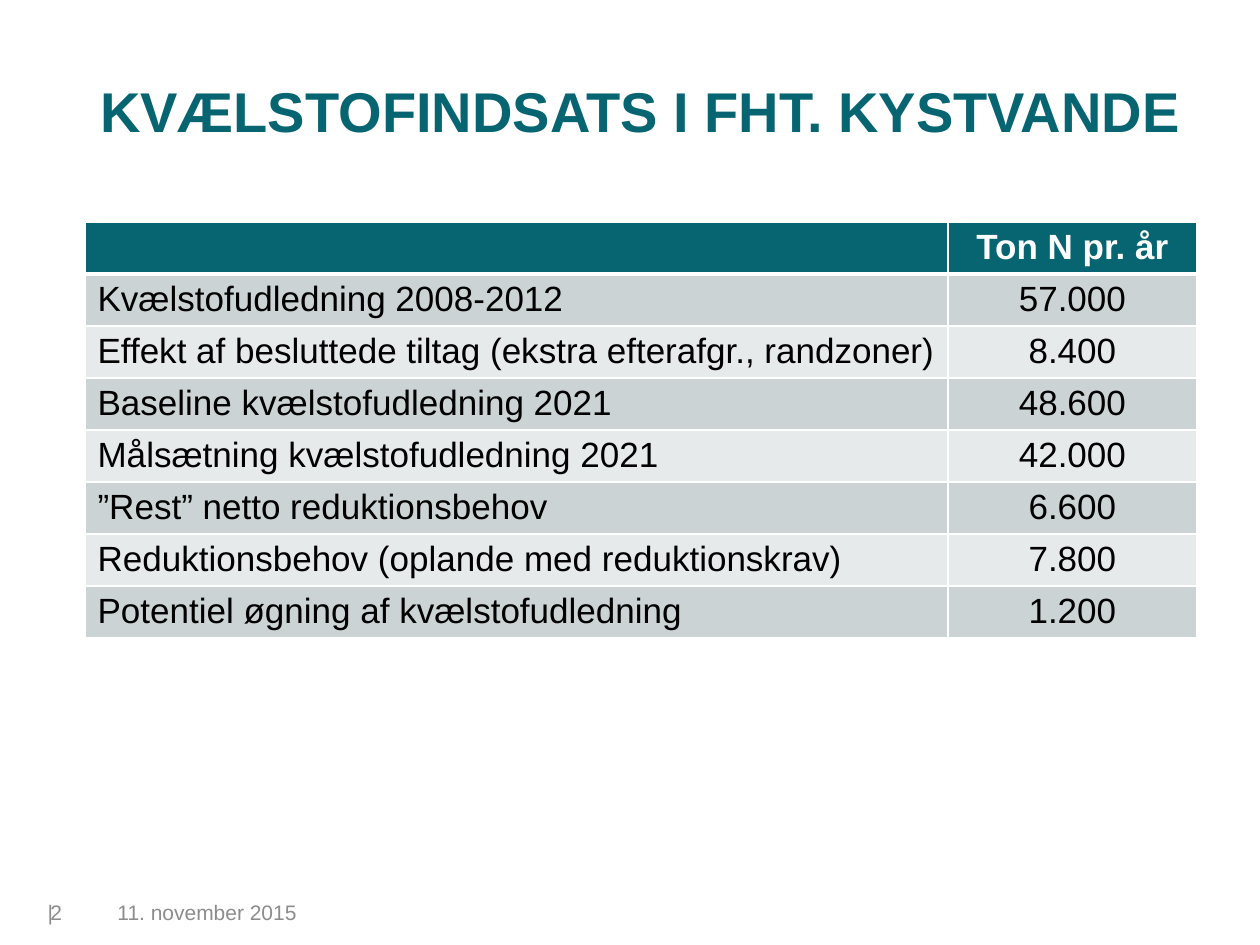
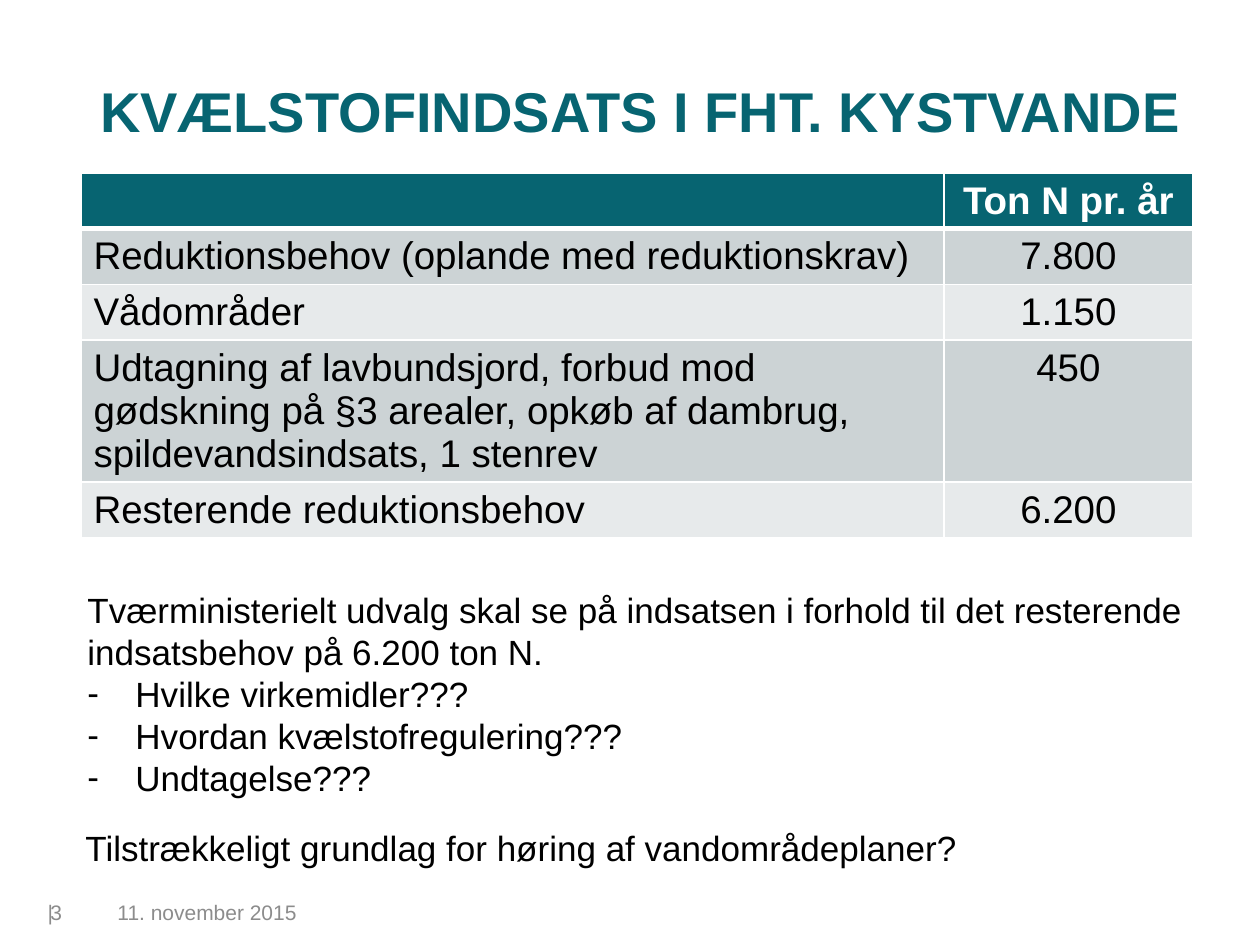
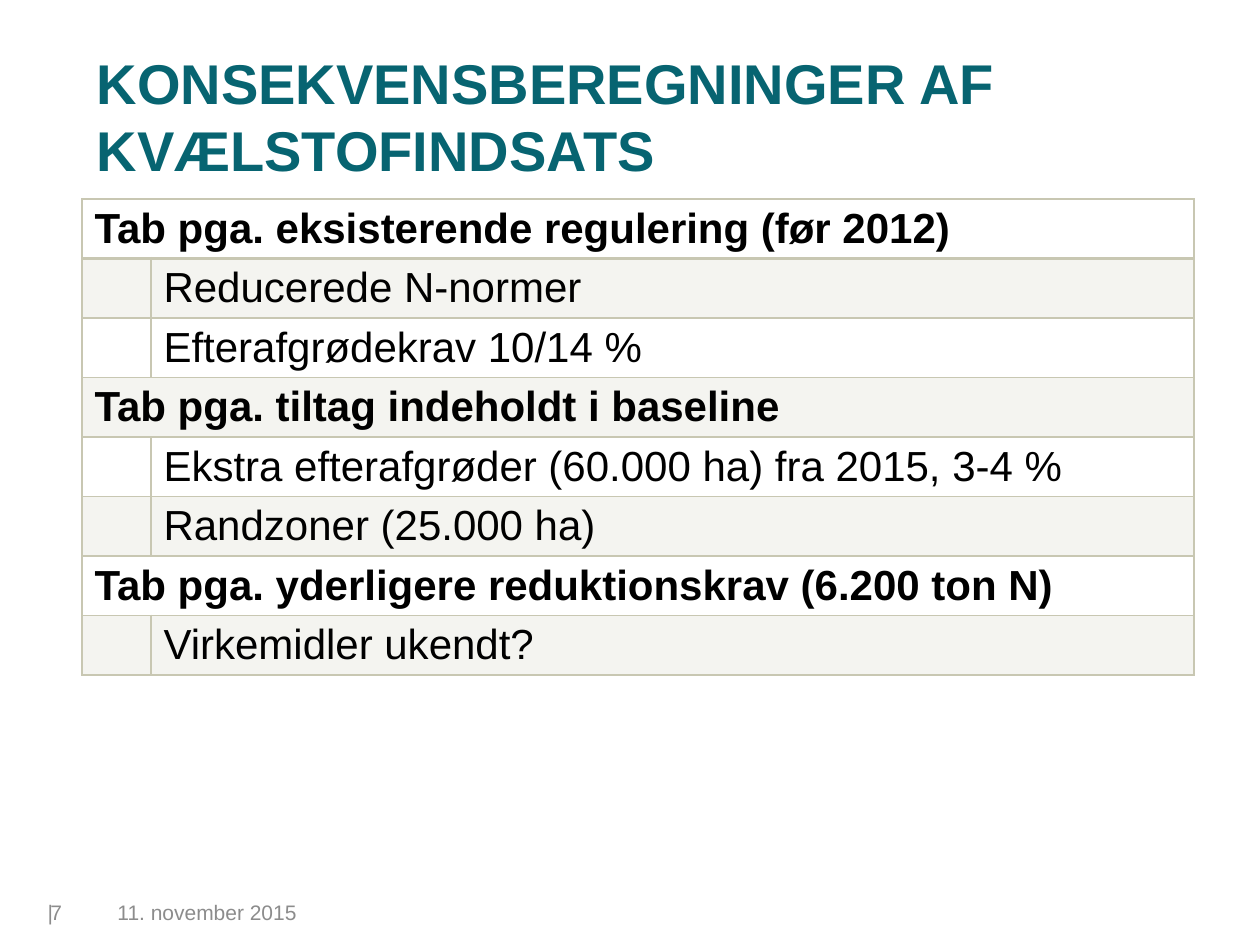
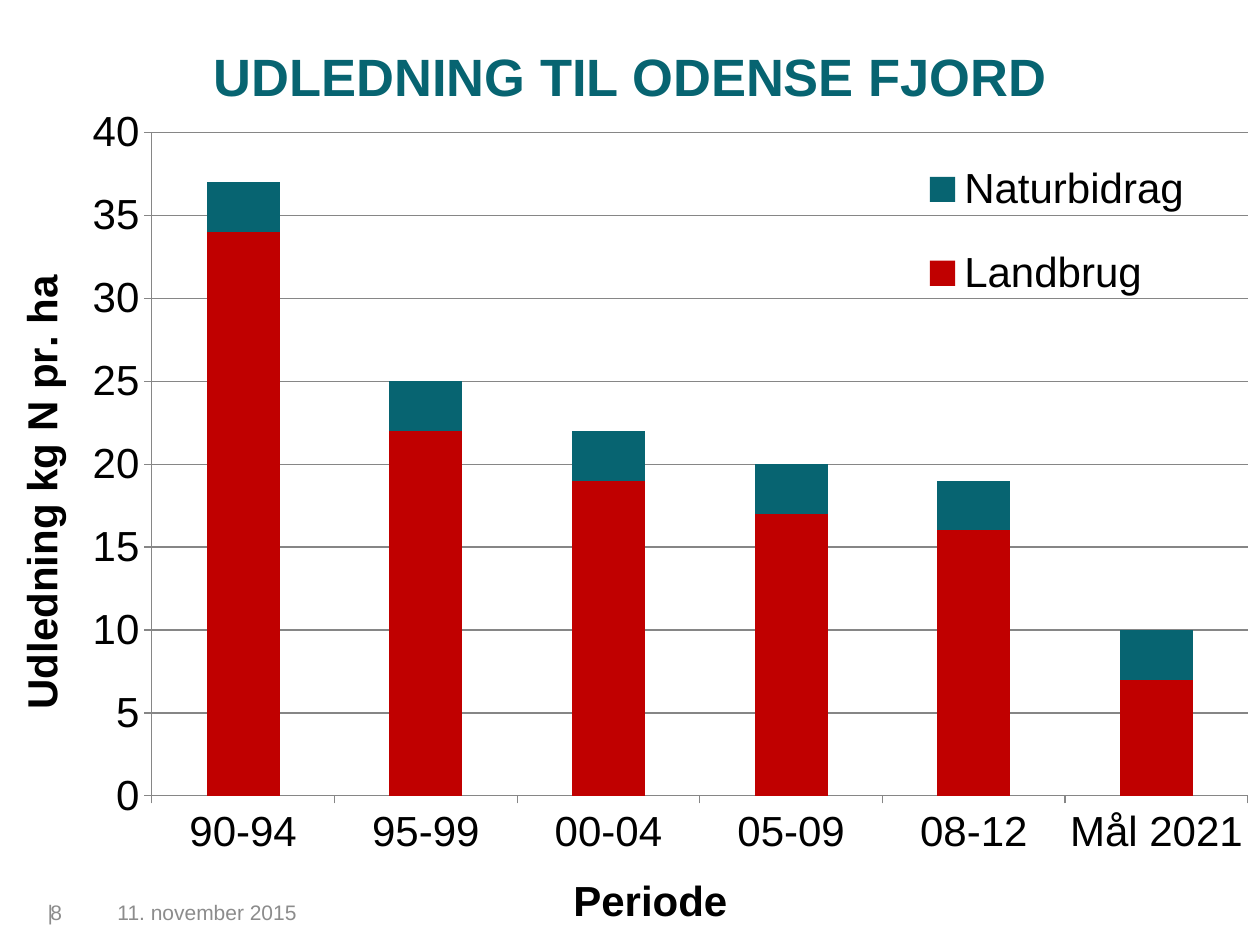
from dataclasses import dataclass
from typing import Any

from lxml.etree import SubElement as Sub
from pptx import Presentation
from pptx.chart.data import CategoryChartData as Data
from pptx.dml.color import RGBColor as Rgb
from pptx.enum.chart import XL_CHART_TYPE as Kind, XL_LEGEND_POSITION as Spot, XL_TICK_MARK as Tick
from pptx.enum.text import MSO_ANCHOR as Anchor, MSO_AUTO_SIZE as Auto, PP_ALIGN as Align
from pptx.oxml import parse_xml
from pptx.oxml.ns import nsdecls, qn
from pptx.util import Emu, Pt

# Shared look
FONT = "Arial"
HUES = {
    "teal": "076471", "red": "C00000", "grey": "8C8C8C", "rule": "868686",
    "dark": "CCD3D5", "light": "E7EAEB", "sand": "C8C7B2", "pale": "F4F4F0",
    "white": "FFFFFF", "black": "000000",
}
DATE = "11. november 2015"
NITRO = "KVÆLSTOFINDSATS I FHT. KYSTVANDE"
ROW = 52


@dataclass
class Box:
    left: int
    top: int
    width: int
    height: int


@dataclass
class Row:
    cells: tuple[str, ...]
    fill: str | None
    ink: str = "black"
    bold: bool = False
    base: int = 1
    merge: bool = False


@dataclass
class Grid:
    left: int
    top: int
    cols: tuple[int, ...]
    size: int
    edge: str
    aligns: tuple[Any, ...]
    rows: list[Row]


TITLE = Box(84, 55, 1113, 110)
TALL = Box(84, 37, 1113, 157)
HIGH = Box(74, -3, 1113, 157)


# Helpers
def px(count: float) -> Emu:
    return Emu(round(count * 914400 / 126))


def hue(name: str) -> Rgb:
    return Rgb.from_string(HUES[name])


def apply(item: Any, values: dict[str, Any]) -> None:
    for key, value in values.items():
        setattr(item, key, value)


def place(box: Box) -> list[Emu]:
    return [px(n) for n in (box.left, box.top, box.width, box.height)]


def ink(font: Any, size: int, color: str = "black", bold: bool = False) -> None:
    apply(font, {"name": FONT, "size": Pt(size), "bold": bold})
    font.color.rgb = hue(color)


def write(para: Any, text: str, size: int, color: str = "black", bold: bool = False) -> None:
    para.text = text
    for run in para.runs:
        ink(run.font, size, color, bold)


def add_text(slide: Any, box: Box, lines: list[str], size: int,
             color: str = "black", bold: bool = False, fit: bool = True) -> Any:
    frame = slide.shapes.add_textbox(*place(box)).text_frame
    apply(frame, {"word_wrap": not fit,
                  "auto_size": Auto.SHAPE_TO_FIT_TEXT if fit else Auto.NONE})
    for i, line in enumerate(lines):
        para = frame.add_paragraph() if i else frame.paragraphs[0]
        write(para, line, size, color, bold)
    return frame


def add_dash(para: Any) -> None:
    props = para._p.get_or_add_pPr()
    props.set("marL", str(px(48)))
    props.set("indent", str(-px(48)))
    Sub(props, qn("a:buFont"), typeface=FONT)
    Sub(props, qn("a:buChar"), char="-")


def add_page(deck: Any, title: str, page: int, box: Box = TITLE,
             size: int = 32, align: Any = Align.CENTER) -> Any:
    slide = deck.slides.add_slide(deck.slide_layouts[5])
    head = slide.shapes.title
    apply(head, dict(zip(("left", "top", "width", "height"), place(box))))
    apply(head.text_frame, {"word_wrap": True, "auto_size": Auto.NONE,
                            "vertical_anchor": Anchor.MIDDLE})
    para = head.text_frame.paragraphs[0]
    write(para, title, size, "teal", True)
    para.alignment = align
    # Footer: date, then page number and bar set by a tab stop
    add_text(slide, Box(105, 893, 294, 50), [DATE], 12, "grey", fit=False)
    foot = add_text(slide, Box(0, 893, 98, 50), [f"{page}\t|"], 12, "grey", fit=False)
    props = foot.paragraphs[0]._p.get_or_add_pPr()
    props.set("marL", str(px(38)))
    props.set("indent", "0")
    Sub(Sub(props, qn("a:tabLst")), qn("a:tab"), pos=str(px(67)), algn="l")
    return slide


# Tables
def add_edge(cell: Any, color: str, top: int, base: int) -> None:
    props = cell._tc.get_or_add_tcPr()
    for i, (side, width) in enumerate({"L": 1, "R": 1, "T": top, "B": base}.items()):
        line = parse_xml(
            f'<a:ln{side} {nsdecls("a")} w="{Pt(width)}"><a:solidFill>'
            f'<a:srgbClr val="{HUES[color]}"/></a:solidFill></a:ln{side}>')
        props.insert(i, line)


def add_grid(slide: Any, grid: Grid) -> None:
    box = Box(grid.left, grid.top, sum(grid.cols), ROW * len(grid.rows))
    table = slide.shapes.add_table(len(grid.rows), len(grid.cols), *place(box)).table
    apply(table, {"first_row": False, "horz_banding": False})
    for col, width in zip(table.columns, grid.cols):
        col.width = px(width)
    top = 1
    for r, row in enumerate(grid.rows):
        for c, text in enumerate(row.cells):
            cell = table.cell(r, c)
            if row.fill:
                cell.fill.solid()
                cell.fill.fore_color.rgb = hue(row.fill)
            else:
                cell.fill.background()
            add_edge(cell, grid.edge, top, row.base)
            if text:
                para = cell.text_frame.paragraphs[0]
                write(para, text, grid.size, row.ink, row.bold)
                para.alignment = grid.aligns[c]
        if row.merge:
            table.cell(r, 0).merge(table.cell(r, len(grid.cols) - 1))
        top = row.base


def ton_grid(left: int, top: int, size: int, pairs: list[tuple[str, str]]) -> Grid:
    rows = [Row(("", "Ton N pr. år"), "teal", "white", True, 3)]
    rows += [Row(pair, ("dark", "light")[i % 2]) for i, pair in enumerate(pairs)]
    return Grid(left, top, (863, 249), size, "white", (Align.LEFT, Align.CENTER), rows)


def loss_grid(groups: dict[str, list[str]]) -> Grid:
    lines = []
    for head, items in groups.items():
        lines += [(head, "")] + [("", item) for item in items]
    rows = [Row(line, "pale" if i % 2 else None, bold=bool(line[0]),
                base=1 if i else 2, merge=bool(line[0]))
            for i, line in enumerate(lines)]
    return Grid(82, 199, (69, 1043), 24, "sand", (Align.LEFT, Align.LEFT), rows)


# Chart
def set_layout(item: Any, index: int, inner: bool = False, **parts: float) -> None:
    for old in item.findall(qn("c:layout")):
        item.remove(old)
    layout = parse_xml(f'<c:layout {nsdecls("c")}/>')
    item.insert(index, layout)
    manual = Sub(layout, qn("c:manualLayout"))
    if inner:
        Sub(manual, qn("c:layoutTarget"), val="inner")
    for key in ("xMode", "yMode"):
        Sub(manual, qn(f"c:{key}"), val="edge")
    for key, value in parts.items():
        Sub(manual, qn(f"c:{key}"), val=str(value))


def add_bars(slide: Any, box: Box, cats: list[str],
             series: dict[str, tuple[str, list[int]]]) -> None:
    data = Data(number_format="0")
    data.categories = cats
    for name, (_, values) in series.items():
        data.add_series(name, values)
    chart = slide.shapes.add_chart(Kind.COLUMN_CLUSTERED, *place(box), data).chart
    apply(chart, {"has_title": False, "has_legend": True})
    ink(chart.font, 24)
    clear = parse_xml(f'<c:spPr {nsdecls("c", "a")}><a:noFill/><a:ln><a:noFill/></a:ln></c:spPr>')
    chart._chartSpace.find(qn("c:txPr")).addprevious(clear)
    # Bars share one slot, so the lower value stands in front
    plot = chart.plots[0]
    apply(plot, {"gap_width": 150, "overlap": 100, "vary_by_categories": False})
    for bar, (color, _) in zip(plot.series, series.values()):
        bar.format.fill.solid()
        bar.format.fill.fore_color.rgb = hue(color)
    set_layout(plot._element.getparent(), 0, True, x=0.124, y=0.084, w=0.861, h=0.813)
    # Axes
    axis = chart.value_axis
    apply(axis, {"minimum_scale": 0, "maximum_scale": 40, "major_unit": 5,
                 "has_major_gridlines": True, "has_title": True})
    apply(axis.tick_labels, {"number_format": "0", "number_format_is_linked": False})
    for side in (axis, chart.category_axis):
        apply(side, {"major_tick_mark": Tick.OUTSIDE, "minor_tick_mark": Tick.NONE})
    for part in (axis, chart.category_axis, axis.major_gridlines):
        part.format.line.color.rgb = hue("rule")
        part.format.line.width = Pt(0.75)
    label = axis.axis_title
    write(label.text_frame.paragraphs[0], "Udledning kg N pr. ha", 24, bold=True)
    set_layout(label._element, 1, x=0.01, y=0.25)
    # Legend
    apply(chart.legend, {"position": Spot.RIGHT, "include_in_layout": True})
    ink(chart.legend.font, 24)
    set_layout(chart.legend._element, 1, x=0.72, y=0.08, w=0.23, h=0.25)


def main() -> None:
    deck = Presentation()
    apply(deck, {"slide_width": px(1260), "slide_height": px(945)})

    # Nitrogen load and target
    slide = add_page(deck, NITRO, 2)
    add_grid(slide, ton_grid(85, 222, 20, [
        ("Kvælstofudledning 2008-2012", "57.000"),
        ("Effekt af besluttede tiltag (ekstra efterafgr., randzoner)", "8.400"),
        ("Baseline kvælstofudledning 2021", "48.600"),
        ("Målsætning kvælstofudledning 2021", "42.000"),
        ("”Rest” netto reduktionsbehov", "6.600"),
        ("Reduktionsbehov (oplande med reduktionskrav)", "7.800"),
        ("Potentiel øgning af kvælstofudledning", "1.200"),
    ]))

    # Remaining need
    slide = add_page(deck, NITRO, 3)
    add_grid(slide, ton_grid(81, 173, 22, [
        ("Reduktionsbehov (oplande med reduktionskrav)", "7.800"),
        ("Vådområder", "1.150"),
        ("Udtagning af lavbundsjord, forbud mod gødskning på §3 arealer, "
         "opkøb af dambrug, spildevandsindsats, 1 stenrev", "450"),
        ("Resterende reduktionsbehov", "6.200"),
    ]))
    notes = add_text(slide, Box(75, 582, 1129, 224), [
        "Tværministerielt udvalg skal se på indsatsen i forhold til det resterende\v"
        "indsatsbehov på 6.200 ton N.",
        "Hvilke virkemidler???", "Hvordan kvælstofregulering???", "Undtagelse???",
    ], 20)
    for para in notes.paragraphs[1:]:
        add_dash(para)
    add_text(slide, Box(73, 820, 903, 55),
             ["Tilstrækkeligt grundlag for høring af vandområdeplaner?"], 20)

    # Losses by cause
    slide = add_page(deck, "KONSEKVENSBEREGNINGER AF KVÆLSTOFINDSATS", 7, TALL, align=Align.LEFT)
    add_grid(slide, loss_grid({
        "Tab pga. eksisterende regulering (før 2012)":
            ["Reducerede N-normer", "Efterafgrødekrav 10/14 %"],
        "Tab pga. tiltag indeholdt i baseline":
            ["Ekstra efterafgrøder (60.000 ha) fra 2015, 3-4 %", "Randzoner (25.000 ha)"],
        "Tab pga. yderligere reduktionskrav (6.200 ton N)": ["Virkemidler ukendt?"],
    }))

    # Load by period
    slide = add_page(deck, "UDLEDNING TIL ODENSE FJORD", 8, HIGH, 30)
    add_bars(slide, Box(-6, 64, 1273, 816),
             ["90-94", "95-99", "00-04", "05-09", "08-12", "Mål 2021"],
             {"Naturbidrag": ("teal", [37, 25, 22, 20, 19, 10]),
              "Landbrug": ("red", [34, 22, 19, 17, 16, 7])})
    add_text(slide, Box(561, 868, 181, 63), ["Periode"], 24, bold=True)

    deck.save("out.pptx")


if __name__ == "__main__":
    main()
